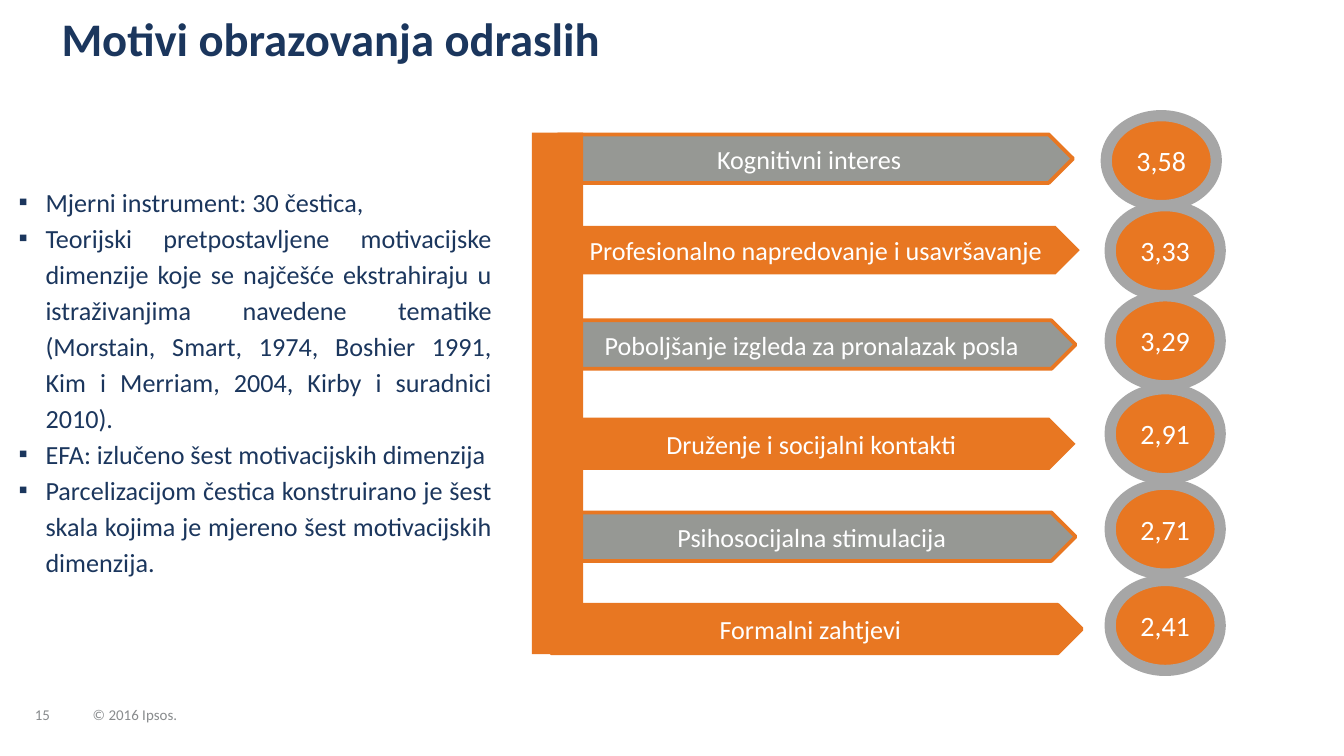
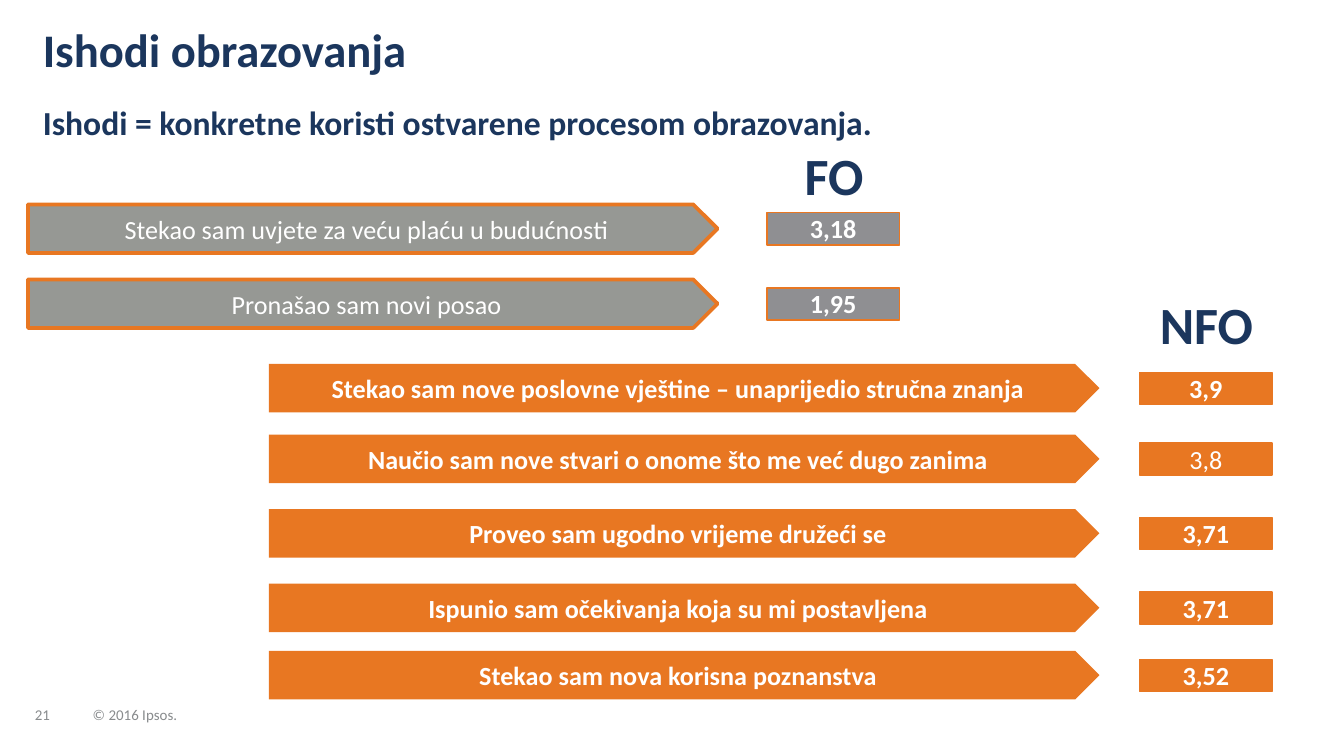
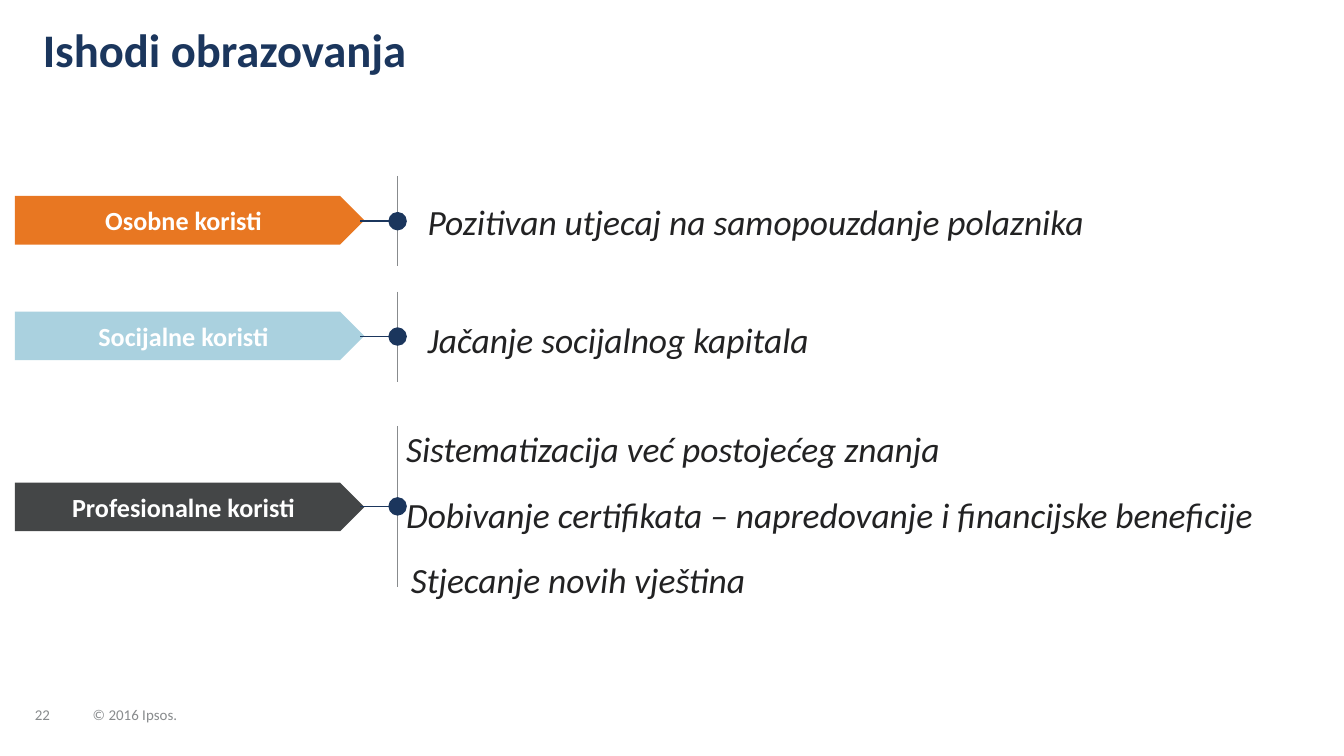
from lxml.etree import SubElement
from pptx import Presentation
from pptx.dml.color import RGBColor
from pptx.enum.shapes import MSO_CONNECTOR, MSO_SHAPE
from pptx.enum.text import MSO_ANCHOR as Anchor, PP_ALIGN as Align
from pptx.oxml.ns import qn
from pptx.util import Pt

NAVY = RGBColor(0x1B, 0x36, 0x5D)
ORANGE = RGBColor(0xE8, 0x77, 0x22)
GREY = RGBColor(0x96, 0x98, 0x94)
VALUE_GREY = RGBColor(0x8F, 0x8F, 0x92)
RING_GREY = RGBColor(0xA6, 0xA6, 0xA6)
FOOTER_GREY = RGBColor(0x88, 0x8B, 0x8D)
LIGHT_BLUE = RGBColor(0xAA, 0xD1, 0xDF)
CHARCOAL = RGBColor(0x44, 0x46, 0x47)
INK = RGBColor(0x22, 0x22, 0x23)
WHITE = RGBColor(0xFF, 0xFF, 0xFF)
FONT = "Calibri"
ARROW_HEIGHT = 26


def write(box, text, size, colour, bold=False, italic=False, align=Align.LEFT,
          anchor=Anchor.TOP, inset=(0, 0), spacing=None, wrap=True):
    frame = box.text_frame
    frame.text = text
    frame.word_wrap = wrap
    frame.vertical_anchor = anchor
    frame.margin_left = frame.margin_right = Pt(inset[0])
    frame.margin_top = frame.margin_bottom = Pt(inset[1])
    for paragraph in frame.paragraphs:
        paragraph.alignment = align
        paragraph.line_spacing = spacing
        for span in paragraph.runs:
            font = span.font
            font.name, font.size = FONT, Pt(size)
            font.bold, font.italic = bold, italic
            font.color.rgb = colour


def add_block(page, kind, place, fill, line=None, line_width=2):
    block = page.shapes.add_shape(kind, *map(Pt, place))
    block.shadow.inherit = False
    block.fill.solid()
    block.fill.fore_color.rgb = fill
    if line is None:
        block.line.fill.background()
    else:
        block.line.color.rgb = line
        block.line.width = Pt(line_width)
    return block


deck = Presentation()
deck.slide_width, deck.slide_height = Pt(720), Pt(405)

# Titles and footers on every slide
pages = []
for title, number, left, top in [
    ("Motivi obrazovanja odraslih", "15", 33, 8.6),
    ("Ishodi obrazovanja", "21", 23, 14.4),
    ("Ishodi obrazovanja", "22", 23, 14.4),
]:
    page = deck.slides.add_slide(deck.slide_layouts[6])
    pages.append(page)
    for text, footer_left, width in [(number, 18.7, 24.5), ("© 2016 Ipsos.", 49.7, 54.7)]:
        box = page.shapes.add_textbox(Pt(footer_left), Pt(374.5), Pt(width), Pt(13))
        write(box, text, 8, FOOTER_GREY, anchor=Anchor.BOTTOM, spacing=0.85, wrap=False)
    box = page.shapes.add_textbox(Pt(left), Pt(top), Pt(487), Pt(27.4))
    write(box, title, 25, NAVY, bold=True, spacing=0.9)
motives, outcomes, benefits = pages

# Slide 1: motive arrows behind the orange spine
for text, left, top, width, height, fill, line in [
    ("Profesionalno napredovanje i usavršavanje", 302.4, 121, 276, ARROW_HEIGHT, ORANGE, None),
    ("Poboljšanje izgleda za pronalazak posla", 300.2, 171.6, 276, ARROW_HEIGHT, GREY, ORANGE),
    ("Kognitivni interes", 298.8, 72, 276, ARROW_HEIGHT, GREY, ORANGE),
    ("Druženje i socijalni kontakti", 300.2, 223.8, 276, 28, ORANGE, None),
    ("Psihosocijalna stimulacija", 300.2, 274.5, 276, ARROW_HEIGHT, GREY, ORANGE),
    ("Formalni zahtjevi", 295.2, 324, 284.4, ARROW_HEIGHT, ORANGE, ORANGE),
]:
    arrow = add_block(motives, MSO_SHAPE.PENTAGON, (left, top, width, height), fill, line)
    write(arrow, text, 14, WHITE, align=Align.CENTER, anchor=Anchor.MIDDLE, inset=(7.2, 3.6))
add_block(motives, MSO_SHAPE.RECTANGLE, (285, 71, 27.4, 279.4), ORANGE)

# Slide 1: bulleted notes
notes = motives.shapes.add_textbox(Pt(2.9), Pt(93.6), Pt(267.8), Pt(241))
write(notes, "\n".join([
    "Mjerni instrument: 30 čestica,",
    "Teorijski pretpostavljene motivacijske dimenzije koje se najčešće ekstrahiraju "
    "u istraživanjima navedene tematike (Morstain, Smart, 1974, Boshier 1991, "
    "Kim i Merriam, 2004, Kirby i suradnici 2010).",
    "EFA: izlučeno šest motivacijskih dimenzija",
    "Parcelizacijom čestica konstruirano je šest skala kojima je mjereno "
    "šest motivacijskih dimenzija.",
]), 14, NAVY, align=Align.JUSTIFY, inset=(7.2, 3.6), spacing=1.15)
for paragraph in notes.text_frame.paragraphs:
    properties = paragraph._p.get_or_add_pPr()
    properties.set("marL", str(Pt(14.4)))
    properties.set("indent", str(-Pt(14.4)))
    SubElement(properties, qn("a:buFont")).set("typeface", "Arial")
    SubElement(properties, qn("a:buChar")).set("char", "▪")

# Slide 1: mean scores
for value, left, top in [
    ("3,58", 592.6, 62), ("3,33", 594.7, 110.2), ("3,29", 594.7, 158.5),
    ("2,91", 594.7, 208.3), ("2,71", 594.7, 259.4), ("2,41", 594.7, 311),
]:
    score = add_block(motives, MSO_SHAPE.OVAL, (left, top, 59, 48.2), ORANGE, RING_GREY, 6)
    write(score, value, 15, WHITE, align=Align.CENTER, anchor=Anchor.MIDDLE)

# Slide 2: subtitle and group headings
box = outcomes.shapes.add_textbox(Pt(23), Pt(56.9), Pt(658), Pt(19.4))
write(box, "Ishodi = konkretne koristi ostvarene procesom obrazovanja.", 18, NAVY,
      bold=True, spacing=0.9)
for text, left, top in [("FO", 384.5, 77), ("NFO", 584, 156.5)]:
    box = outcomes.shapes.add_textbox(Pt(left), Pt(top), Pt(124.6), Pt(34))
    write(box, text, 28, NAVY, bold=True, align=Align.CENTER)

# Slide 2: each outcome with its score
formal = (15, 369.4, 411, GREY, ORANGE, VALUE_GREY, False)
nonformal = (144, 445, 610.6, ORANGE, None, ORANGE, True)
for group, top, text, value, value_bold in [
    (formal, 109.5, "Stekao sam uvjete za veću plaću u budućnosti", "3,18", True),
    (formal, 149.7, "Pronašao sam novi posao", "1,95", True),
    (nonformal, 195, "Stekao sam nove poslovne vještine – unaprijedio stručna znanja", "3,9", True),
    (nonformal, 232.8, "Naučio sam nove stvari o onome što me već dugo zanima", "3,8", False),
    (nonformal, 272.7, "Proveo sam ugodno vrijeme družeći se", "3,71", True),
    (nonformal, 312.6, "Ispunio sam očekivanja koja su mi postavljena", "3,71", True),
    (nonformal, 348.7, "Stekao sam nova korisna poznanstva", "3,52", True),
]:
    left, width, value_left, fill, line, value_fill, bold = group
    arrow = add_block(outcomes, MSO_SHAPE.PENTAGON, (left, top, width, ARROW_HEIGHT), fill, line)
    write(arrow, text, 14, WHITE, bold=bold, align=Align.CENTER,
          anchor=Anchor.MIDDLE, inset=(7.2, 3.6))
    score = add_block(outcomes, MSO_SHAPE.RECTANGLE, (value_left, top + 4.5, 70.8, 17.2),
                      value_fill, ORANGE, 0.75)
    write(score, value, 14, WHITE, bold=value_bold, align=Align.CENTER)

# Slide 3: benefit labels
for text, top, fill in [
    ("Osobne koristi", 105, ORANGE),
    ("Socijalne koristi", 167, LIGHT_BLUE),
    ("Profesionalne koristi", 258.6, CHARCOAL),
]:
    label = add_block(benefits, MSO_SHAPE.PENTAGON, (8, top, 187.2, ARROW_HEIGHT), fill)
    write(label, text, 14, WHITE, bold=True, align=Align.CENTER,
          anchor=Anchor.MIDDLE, inset=(7.2, 3.6))

# Slide 3: benefit descriptions
for text, left, top, width in [
    ("Pozitivan utjecaj na samopouzdanje polaznika", 222, 100.5, 412.6),
    ("Jačanje socijalnog kapitala", 222, 163.7, 274.3),
    ("Sistematizacija već postojećeg znanja", 210.5, 221.8, 412.6),
    ("Dobivanje certifikata – napredovanje i financijske beneficije", 210.5, 257, 509.5),
    ("Stjecanje novih vještina", 213, 292, 274.3),
]:
    description = add_block(benefits, MSO_SHAPE.RECTANGLE, (left, top, width, 33), WHITE)
    write(description, text, 19, INK, italic=True, inset=(7.2, 3.6), spacing=1.15)

# Slide 3: dividers and the dotted links to them
DIVIDER_X = 213
for top, bottom, middle in [(94.3, 142.6, 118.5), (156.2, 204.5, 180.3), (228.2, 314.6, 271.3)]:
    for start, end, colour, dotted in [
        ((DIVIDER_X, top), (DIVIDER_X, bottom), FOOTER_GREY, False),
        ((193, middle), (DIVIDER_X, middle), NAVY, True),
    ]:
        link = benefits.shapes.add_connector(MSO_CONNECTOR.STRAIGHT, *map(Pt, start + end))
        link.line.color.rgb = colour
        link.line.width = Pt(0.75)
        if dotted:
            tail = SubElement(link.line._get_or_add_ln(), qn("a:tailEnd"))
            tail.set("type", "oval")
            tail.set("w", "lg")
            tail.set("len", "lg")
        SubElement(link._element.spPr, qn("a:effectLst"))

deck.save("out.pptx")
